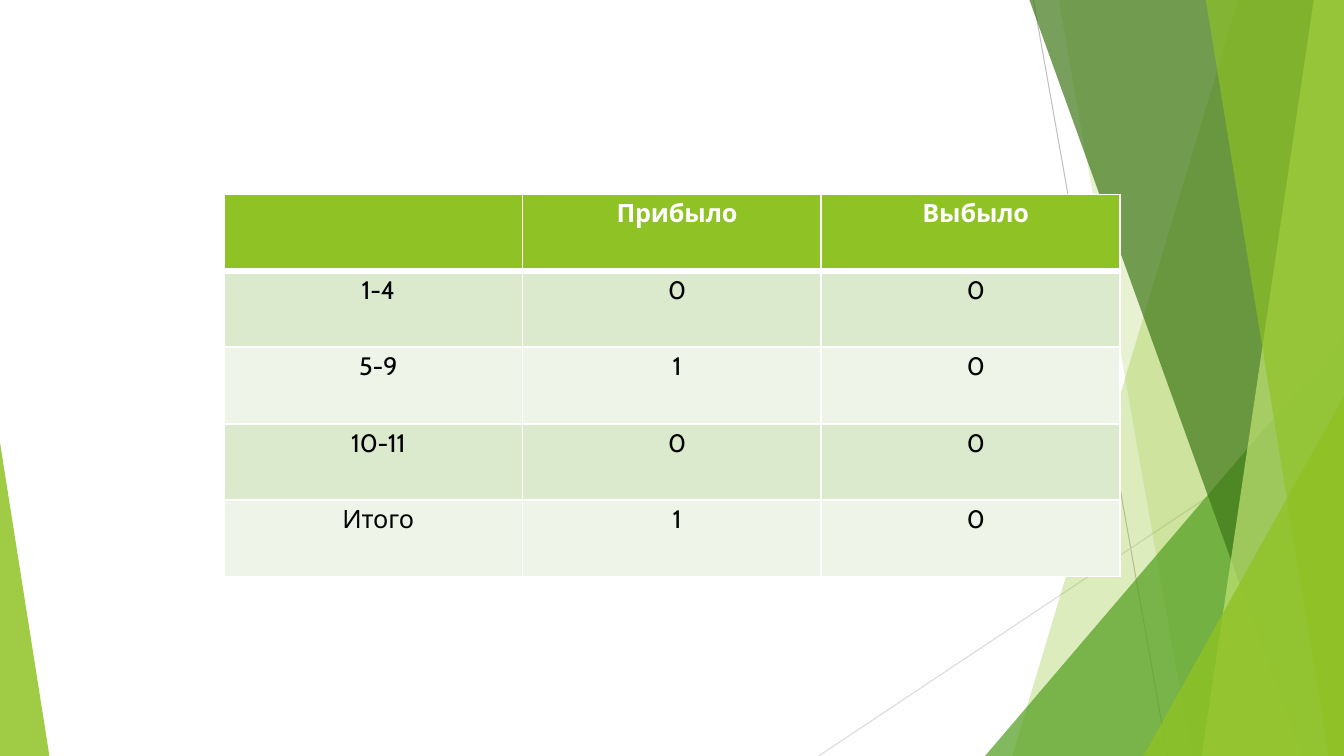
from dataclasses import dataclass

from lxml.etree import SubElement
from pptx import Presentation
from pptx.dml.color import RGBColor
from pptx.enum.shapes import MSO_CONNECTOR
from pptx.enum.text import PP_ALIGN
from pptx.oxml import parse_xml
from pptx.oxml.ns import nsdecls, qn
from pptx.util import Inches, Pt


@dataclass(frozen=True)
class Theme:
    font: str = "Cabin"
    size: float = 18
    lime: str = "8FC225"
    leaf: str = "539F20"
    forest: str = "3F7818"
    pale: str = "C0E474"
    band_dark: str = "DBE9CD"
    band_light: str = "EEF4E8"
    white: str = "FFFFFF"
    black: str = "000000"
    grid: float = 1.5
    header_rule: float = 4.25
    hairline: float = 0.72


THEME = Theme()
WIDTH, HEIGHT = 13.33, 7.5

ROWS = [
    ("", "Прибыло", "Выбыло"),
    ("1-4", "0", "0"),
    ("5-9", "1", "0"),
    ("10-11", "0", "0"),
    ("Итого", "1", "0"),
]
TABLE_LEFT, TABLE_TOP, TABLE_WIDTH, TABLE_HEIGHT = 2.22, 1.93, 8.89, 3.79

# Start, end, colour
HAIRLINES = [
    ((10.25, 0), (11.58, HEIGHT), "BEBEBE"),
    ((WIDTH, 4.03), (8.12, HEIGHT), "D9D9D9"),
]
# Bands reach the right edge: x of the upper left corner, x of the lower left, colour, opacity
BANDS = [
    (12.28, 10.04, THEME.lime, 30),
    (10.5, 11.82, THEME.lime, 20),
]
FRONT_BANDS = [
    (10.21, 12.91, THEME.forest, 70),
    (13.03, 11.92, THEME.pale, 70),
    (11.96, 13.18, THEME.lime, 65),
]
# Corner triangles: side edge x, apex y, foot x, colour, opacity
BACK_CORNER = (WIDTH, 3.33, 9.77, THEME.leaf, 72)
FRONT_CORNERS = [
    (WIDTH, 3.93, 11.34, THEME.lime, 80),
    (0, 4.39, 0.49, THEME.lime, 85),
]


def add_polygon(page, points, color, opacity):
    corners = [(Inches(x), Inches(y)) for x, y in points]
    builder = page.shapes.build_freeform(*corners[0])
    builder.add_line_segments(corners[1:], close=True)
    shape = builder.convert_to_shape()
    shape.shadow.inherit = False
    shape.line.fill.background()
    shape.fill.solid()
    shape.fill.fore_color.rgb = RGBColor.from_string(color)
    srgb = shape._element.spPr.find(".//" + qn("a:srgbClr"))
    SubElement(srgb, qn("a:alpha")).set("val", str(opacity * 1000))


def add_band(page, top_x, bottom_x, color, opacity):
    points = [(WIDTH, 0), (top_x, 0), (bottom_x, HEIGHT), (WIDTH, HEIGHT)]
    add_polygon(page, points, color, opacity)


def add_corner(page, edge_x, apex_y, foot_x, color, opacity):
    points = [(edge_x, apex_y), (foot_x, HEIGHT), (edge_x, HEIGHT)]
    add_polygon(page, points, color, opacity)


def add_hairline(page, start, end, color):
    line = page.shapes.add_connector(
        MSO_CONNECTOR.STRAIGHT, *(Inches(v) for v in start + end))
    line.line.color.rgb = RGBColor.from_string(color)
    line.line.width = Pt(THEME.hairline)
    SubElement(line._element.spPr, qn("a:effectLst"))


def set_borders(cell, top, bottom):
    """Draw white cell edges; they must precede the fill in the cell properties."""
    widths = {"lnL": THEME.grid, "lnR": THEME.grid, "lnT": top, "lnB": bottom}
    for index, (edge, width) in enumerate(widths.items()):
        cell._tc.get_or_add_tcPr().insert(index, parse_xml(
            f'<a:{edge} {nsdecls("a")} w="{Pt(width)}"><a:solidFill>'
            f'<a:srgbClr val="{THEME.white}"/></a:solidFill></a:{edge}>'))


def fill_cell(cell, text, row, column):
    header = row == 0
    band = THEME.band_dark if row % 2 else THEME.band_light
    cell.fill.solid()
    cell.fill.fore_color.rgb = RGBColor.from_string(THEME.lime if header else band)
    set_borders(cell,
                top=THEME.header_rule if row == 1 else THEME.grid,
                bottom=THEME.header_rule if header else THEME.grid)
    if not text:
        return
    cell.margin_left = cell.margin_right = cell.margin_bottom = 0
    cell.margin_top = Inches(0.04)
    para = cell.text_frame.paragraphs[0]
    para.alignment = PP_ALIGN.CENTER
    para.space_before = Pt(3.1 if row < 3 else 3.2)
    para._p.get_or_add_pPr().set("marL", str(Inches(0.1)))
    span = para.add_run()
    span.text = text
    span.font.name = THEME.font
    span.font.size = Pt(THEME.size)
    span.font.bold = header
    span.font.color.rgb = RGBColor.from_string(THEME.white if header else THEME.black)
    if header or column == 0:
        span.font._element.set("spc", "-10")


def add_transfer_table(page):
    frame = page.shapes.add_table(
        len(ROWS), len(ROWS[0]), Inches(TABLE_LEFT), Inches(TABLE_TOP),
        Inches(TABLE_WIDTH), Inches(TABLE_HEIGHT))
    for row, texts in enumerate(ROWS):
        for column, text in enumerate(texts):
            fill_cell(frame.table.cell(row, column), text, row, column)


def main():
    deck = Presentation()
    deck.slide_width, deck.slide_height = Inches(WIDTH), Inches(HEIGHT)
    page = deck.slides.add_slide(deck.slide_layouts[6])
    for hairline in HAIRLINES:
        add_hairline(page, *hairline)
    for band in BANDS:
        add_band(page, *band)
    add_corner(page, *BACK_CORNER)
    for band in FRONT_BANDS:
        add_band(page, *band)
    for corner in FRONT_CORNERS:
        add_corner(page, *corner)
    add_transfer_table(page)
    deck.save("out.pptx")


if __name__ == "__main__":
    main()
